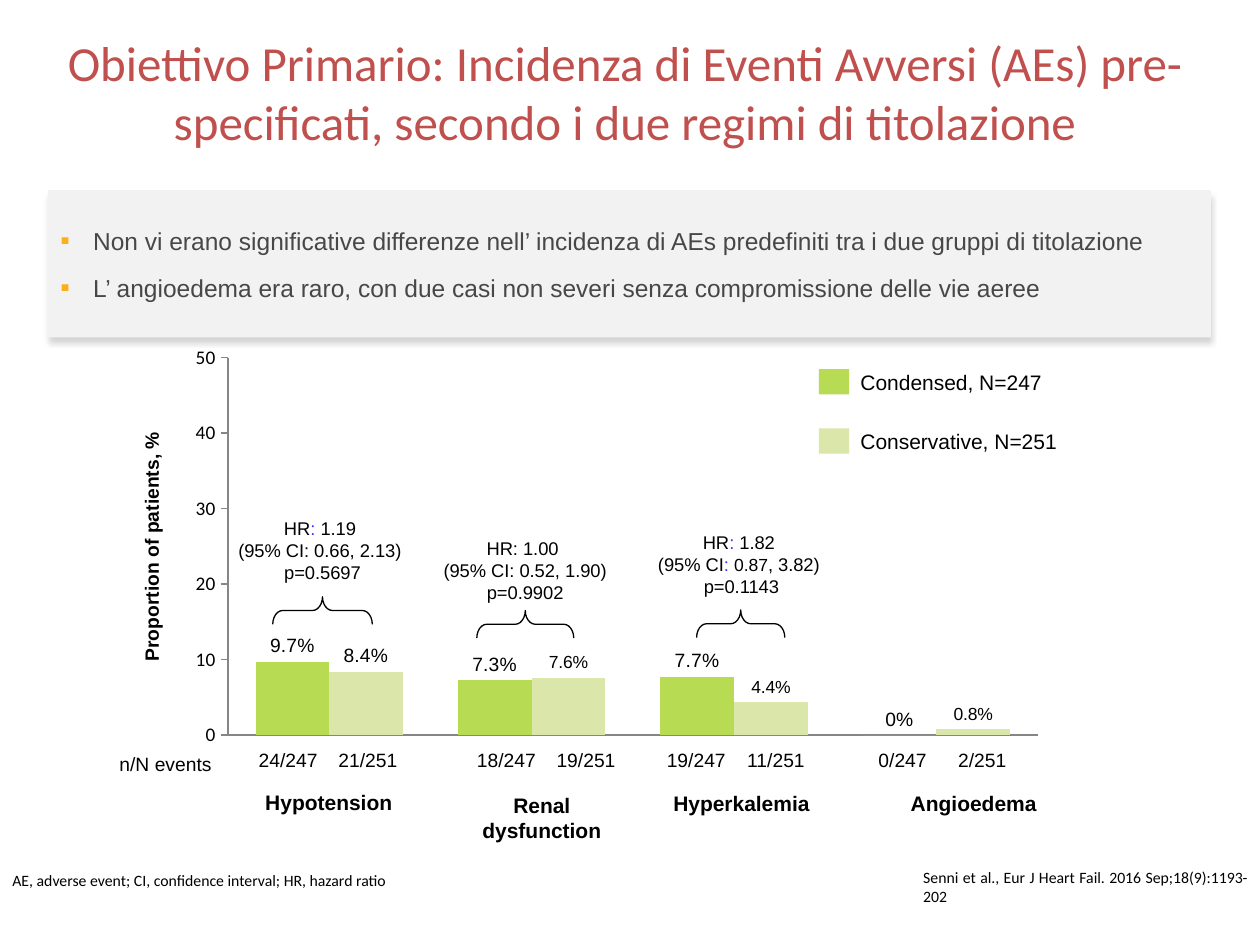
from dataclasses import dataclass

from lxml import etree
from pptx import Presentation
from pptx.chart.data import CategoryChartData
from pptx.dml.color import RGBColor
from pptx.enum.chart import XL_CHART_TYPE, XL_LABEL_POSITION, XL_TICK_LABEL_POSITION, XL_TICK_MARK
from pptx.enum.shapes import MSO_SHAPE
from pptx.enum.text import MSO_ANCHOR, PP_ALIGN
from pptx.oxml import parse_xml
from pptx.oxml.ns import qn
from pptx.util import Pt

COLUMNS = XL_CHART_TYPE.COLUMN_CLUSTERED
OUTSIDE_END = XL_LABEL_POSITION.OUTSIDE_END
NO_LABELS = XL_TICK_LABEL_POSITION.NONE
TICK_NONE, TICK_OUT = XL_TICK_MARK.NONE, XL_TICK_MARK.OUTSIDE
RECTANGLE, BRACE = MSO_SHAPE.RECTANGLE, MSO_SHAPE.RIGHT_BRACE
LEFT, CENTER, JUSTIFY = PP_ALIGN.LEFT, PP_ALIGN.CENTER, PP_ALIGN.JUSTIFY
TOP, MIDDLE = MSO_ANCHOR.TOP, MSO_ANCHOR.MIDDLE
DRAWING = "http://schemas.openxmlformats.org/drawingml/2006/main"
CHART = "http://schemas.openxmlformats.org/drawingml/2006/chart"


@dataclass(frozen=True)
class Theme:
    heading_font: str = "Calibri"
    body_font: str = "Arial"
    title_size: float = 28
    bullet_size: float = 14
    label_size: float = 12
    value_size: float = 11
    ratio_size: float = 10.5
    small_size: float = 10
    note_size: float = 9
    title: str = "C0504D"
    ink: str = "000000"
    body: str = "474749"
    panel: str = "F2F2F2"
    bullet: str = "FCAF17"
    accent: str = "3333FF"
    axis: str = "868686"
    condensed: str = "B8DB54"
    conservative: str = "DBE6AA"


def color(code):
    return RGBColor.from_string(code)


class SlideBuilder:
    def __init__(self, slide, theme):
        self.slide = slide
        self.theme = theme

    def style(self, font, size, code=None, name=None, bold=False):
        font.name = name or self.theme.body_font
        font.size = Pt(size)
        font.bold = bold
        font.color.rgb = color(code or self.theme.ink)

    def text(self, bounds, paragraphs, size, code=None, name=None, bold=False,
             align=LEFT, anchor=TOP):
        """Each paragraph is a list of (words, colour or None, size or None)."""
        box = self.slide.shapes.add_textbox(*map(Pt, bounds))
        frame = box.text_frame
        frame.word_wrap = True
        frame.vertical_anchor = anchor
        for index, spans in enumerate(paragraphs):
            para = frame.add_paragraph() if index else frame.paragraphs[0]
            para.alignment = align
            self.style(para.font, size, code, name, bold)
            for words, span_code, span_size in spans:
                for row, piece in enumerate(words.split("\n")):
                    if row:
                        para.add_line_break()
                    span = para.add_run()
                    span.text = piece
                    if span_code:
                        span.font.color.rgb = color(span_code)
                    if span_size:
                        span.font.size = Pt(span_size)
        return box

    def label(self, bounds, words, size, **options):
        return self.text(bounds, [[(words, None, None)]], size, **options)

    def vertical_label(self, bounds, words, size):
        box = self.label(bounds, words, size, bold=True)
        box.text_frame.word_wrap = False
        box.text_frame._txBody.bodyPr.set("vert", "vert270")

    def rectangle(self, bounds, fill):
        shape = self.slide.shapes.add_shape(RECTANGLE, *map(Pt, bounds))
        shape.shadow.inherit = False
        shape.fill.solid()
        shape.fill.fore_color.rgb = color(fill)
        shape.line.fill.background()
        return shape

    def brace(self, bounds):
        shape = self.slide.shapes.add_shape(BRACE, *map(Pt, bounds))
        shape.shadow.inherit = False
        shape.rotation = 270
        shape.adjustments[0] = 0.36
        shape.fill.background()
        shape.line.color.rgb = color(self.theme.ink)
        shape.line.width = Pt(0.75)

    def bullet_panel(self, bounds, lines):
        panel = self.rectangle(bounds, self.theme.panel)
        effects = panel._element.spPr.find(qn("a:effectLst"))
        effects.append(parse_xml(
            f'<a:outerShdw xmlns:a="{DRAWING}" blurRad="{Pt(3)}" dist="{Pt(3)}" dir="5400000" '
            'algn="t" rotWithShape="0"><a:srgbClr val="000000"><a:alpha val="16000"/>'
            '</a:srgbClr></a:outerShdw>'))
        frame = panel.text_frame
        frame.word_wrap = True
        frame.vertical_anchor = MIDDLE
        frame.margin_left = frame.margin_right = Pt(7.2)
        frame.margin_top = frame.margin_bottom = Pt(7.2)
        for index, line in enumerate(lines):
            para = frame.add_paragraph() if index else frame.paragraphs[0]
            para.alignment = LEFT
            para.level = 2
            para.space_after = Pt(10)
            properties = para._p.get_or_add_pPr()
            properties.set("marL", str(Pt(18.7)))
            properties.set("indent", str(-Pt(18.7)))
            bullet_color = etree.SubElement(properties, qn("a:buClr"))
            etree.SubElement(bullet_color, qn("a:srgbClr"), val=self.theme.bullet)
            etree.SubElement(properties, qn("a:buSzPct"), val="110000")
            etree.SubElement(properties, qn("a:buFont"), typeface=self.theme.body_font)
            etree.SubElement(properties, qn("a:buChar"), char="▪")
            para.add_run().text = line
            self.style(para.font, self.theme.bullet_size, self.theme.body)

    def column_chart(self, bounds, categories, series, plot):
        """Each series is (name, values, colour, label font, label sizes)."""
        theme = self.theme
        data = CategoryChartData()
        data.categories = categories
        for name, values, *_ in series:
            data.add_series(name, values)
        chart = self.slide.shapes.add_chart(COLUMNS, *map(Pt, bounds), data).chart
        chart.has_legend = chart.has_title = False
        self.style(chart.font, theme.small_size, name=theme.heading_font)

        # Axes
        for axis in (chart.category_axis, chart.value_axis):
            axis.has_major_gridlines = False
            axis.minor_tick_mark = TICK_NONE
            axis.format.line.color.rgb = color(theme.axis)
        chart.category_axis.major_tick_mark = TICK_NONE
        chart.category_axis.tick_label_position = NO_LABELS
        scale = chart.value_axis
        scale.major_tick_mark = TICK_OUT
        scale.minimum_scale, scale.maximum_scale, scale.major_unit = 0, 50, 10
        self.style(scale.tick_labels.font, theme.value_size, name=theme.heading_font)

        # Columns with their labels
        columns = chart.plots[0]
        columns.gap_width, columns.overlap = 75, 0
        columns.vary_by_categories = False
        for drawn, (_, values, fill, label_font, sizes) in zip(columns.series, series):
            drawn.format.fill.solid()
            drawn.format.fill.fore_color.rgb = color(fill)
            labels = drawn.data_labels
            labels.show_value = True
            labels.position = OUTSIDE_END
            self.style(labels.font, theme.value_size, name=label_font)
            for index, (value, size) in enumerate(zip(values, sizes)):
                label = drawn.points[index].data_label
                span = label.text_frame.paragraphs[0].add_run()
                span.text = f"{value}%"
                self.style(span.font, size)
                label.position = OUTSIDE_END

        # Fixed inner plot area
        area = chart._chartSpace.chart.plotArea
        for old in area.findall(qn("c:layout")):
            area.remove(old)
        sides = "".join(f'<c:{key} val="{value}"/>' for key, value in plot.items())
        area.insert(0, parse_xml(
            f'<c:layout xmlns:c="{CHART}"><c:manualLayout><c:layoutTarget val="inner"/>'
            f'<c:xMode val="edge"/><c:yMode val="edge"/>{sides}</c:manualLayout></c:layout>'))


def main():
    theme = Theme()
    deck = Presentation()
    deck.slide_width, deck.slide_height = Pt(720), Pt(540)
    page = SlideBuilder(deck.slides.add_slide(deck.slide_layouts[6]), theme)

    # Title and footnotes
    heading, note = theme.heading_font, theme.note_size
    page.label((4.5, 13.5, 705, 78), "Obiettivo Primario: Incidenza di Eventi Avversi (AEs) "
               "pre-specificati, secondo i due regimi di titolazione", theme.title_size,
               code=theme.title, name=heading, align=CENTER, anchor=MIDDLE)
    page.label((0, 494, 250.5, 32.5), "AE, adverse event; CI, confidence interval; HR, hazard ratio",
               note, name=heading)
    page.label((520.5, 492.3, 199.5, 34.5), "Senni et al., Eur J Heart Fail. 2016 Sep;18(9):1193-202",
               note, name=heading, align=JUSTIFY)

    # Chart
    value, small = theme.value_size, theme.small_size
    page.column_chart((104.4, 166, 499, 262.8), ["1", "2", "3", "4"], [
        ("Series 1", (9.7, 7.3, 7.7, 0), theme.condensed, theme.body_font, [value] * 4),
        ("Series 2", (8.4, 7.6, 4.4, 0.8), theme.conservative, heading, [value] + [small] * 3),
    ], {"x": 0.052, "y": 0.146, "w": 0.927, "h": 0.821})
    page.vertical_label((76.3, 246.2, 28, 139), "Proportion of patients, %", value)

    # Legend
    legend = [("Condensed, N=247", theme.condensed), ("Conservative, N=251", theme.conservative)]
    for row, (name, fill) in enumerate(legend):
        drop = row * 33.8
        page.rectangle((468, 211 + drop, 17.3, 14.4), fill)
        page.label((484.6, 207.4 + drop, 158, 21.6), name, theme.label_size, anchor=MIDDLE)

    # Event counts and names below the columns
    page.label((61.2, 426.2, 96.5, 21), "n/N events", value)
    events = [
        ("Hypotension", 139.7, 447.3, 21.6, 139.2, ("24/247", "21/251")),
        ("Renal dysfunction", 261.4, 449.3, 36, 263.9, ("18/247", "19/251")),
        ("Hyperkalemia", 375.5, 448, 21.6, 372.4, ("19/247", "11/251")),
        ("Angioedema", 508.2, 448, 21.6, 490.3, ("0/247", "2/251")),
    ]
    for name, left, top, height, count_left, counts in events:
        page.label((left, top, 96.5, height), name, theme.label_size, bold=True,
                   align=CENTER, anchor=MIDDLE)
        for column, count in enumerate(counts):
            page.label((count_left + column * 45.5, 424, 51, 21), count, value, align=CENTER)

    # Hazard ratios with braces
    accent = theme.accent
    ratios = [
        ((127.4, 292, 113.8), (176.4, 320.4, 15.8, 56.9),
         [[("HR", None, None), (": ", accent, None),
           ("1.19 \n(95% CI: 0.66, 2.13) \np=0.5697", None, None)]]),
        ((244, 303.5, 112.3), (292.3, 329, 15.8, 55.4),
         [[("HR: 1.00 \n(95% CI: 0.52, 1.90) p=0.9902", None, None)]]),
        ((367.2, 299.8, 113), (415.4, 331.2, 15.8, 50.4),
         [[("HR", None, None), (":", accent, None), (" 1.82 \n(95% CI", None, None),
           (": ", accent, None), ("0.87", None, small), (", 3.82) ", None, None)],
          [("p=0.1143", None, None)]]),
    ]
    for (left, top, width), brace, paragraphs in ratios:
        page.text((left, top, width, 45.4), paragraphs, theme.ratio_size, align=CENTER)
        page.brace(brace)

    # Key messages
    page.bullet_panel((27.4, 108.7, 664.6, 84.2), [
        "Non vi erano significative differenze nell’ incidenza di AEs predefiniti "
        "tra i due gruppi di titolazione",
        "L’ angioedema era raro, con due casi non severi senza compromissione delle vie aeree",
    ])
    deck.save("out.pptx")


if __name__ == "__main__":
    main()
